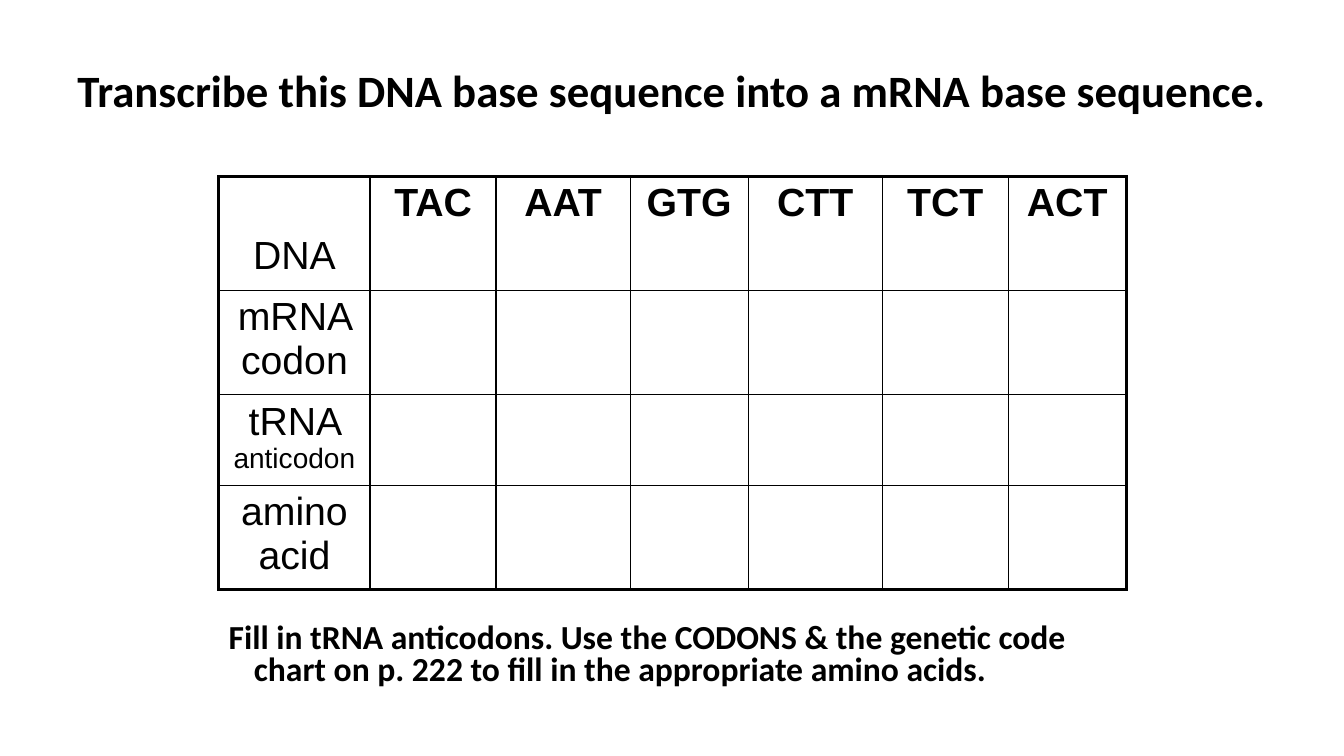
from lxml.etree import SubElement
from pptx import Presentation
from pptx.dml.color import RGBColor
from pptx.enum.text import MSO_ANCHOR, PP_ALIGN
from pptx.oxml.ns import qn
from pptx.util import Pt

EMU_PER_PX = 9144  # 100 px to the inch
BLACK = RGBColor(0x00, 0x00, 0x00)
THIN, THICK = 1, 2.25

COL_WIDTHS = [150, 125, 133, 117, 133, 125, 117]
ROW_HEIGHTS = [113, 103, 90, 103]
DNA_TRIPLETS = ["TAC", "AAT", "GTG", "CTT", "TCT", "ACT"]
# Each row label is a list of (text, size) runs
ROW_LABELS = [
    [("DNA", 28)],
    [("mRNA codon", 28)],
    [("tRNA ", 28), ("anticodon", 20)],
    [("amino acid", 28)],
]


def px(n):
    return n * EMU_PER_PX


def set_font(font, name, size, bold):
    font.name = name
    font.size = Pt(size)
    font.bold = bold
    font.color.rgb = BLACK


def add_text(slide, box, text, size, line_spacing, anchor=MSO_ANCHOR.TOP, hanging=0):
    tf = slide.shapes.add_textbox(*map(px, box)).text_frame
    tf.word_wrap = True
    tf.vertical_anchor = anchor
    p = tf.paragraphs[0]
    p.text = text
    p.line_spacing = line_spacing
    set_font(p.font, "Calibri", size, True)
    if hanging:
        pPr = p._p.get_or_add_pPr()
        pPr.set("marL", str(px(hanging)))
        pPr.set("indent", str(-px(hanging)))


def set_borders(cell, **widths):
    tcPr = cell._tc.get_or_add_tcPr()
    for side in "LRTB":
        ln = SubElement(tcPr, qn(f"a:ln{side}"), w=str(Pt(widths[side])))
        fill = SubElement(ln, qn("a:solidFill"))
        SubElement(fill, qn("a:srgbClr"), val=str(BLACK))


def fill_cell(cell, runs, bold):
    p = cell.text_frame.paragraphs[0]
    p.alignment = PP_ALIGN.CENTER
    for text, size in runs:
        r = p.add_run()
        r.text = text
        set_font(r.font, "Arial", size, bold)


def add_codon_table(slide, left, top):
    n_rows, n_cols = len(ROW_HEIGHTS), len(COL_WIDTHS)
    box = (left, top, sum(COL_WIDTHS), sum(ROW_HEIGHTS))
    table = slide.shapes.add_table(n_rows, n_cols, *map(px, box)).table
    table.first_row = table.horz_banding = False
    for col, width in zip(table.columns, COL_WIDTHS):
        col.width = px(width)
    for row, height in zip(table.rows, ROW_HEIGHTS):
        row.height = px(height)

    # Thick outer frame, thin inner grid
    for i in range(n_rows):
        for j in range(n_cols):
            cell = table.cell(i, j)
            set_borders(
                cell,
                L=THICK if j == 0 else THIN,
                R=THICK if j == n_cols - 1 else THIN,
                T=THICK if i == 0 else THIN,
                B=THICK if i == n_rows - 1 else THIN,
            )
            cell.fill.background()

    # Row labels and DNA triplets
    for i, runs in enumerate(ROW_LABELS):
        fill_cell(table.cell(i, 0), runs, False)
    for j, triplet in enumerate(DNA_TRIPLETS, start=1):
        fill_cell(table.cell(0, j), [(triplet, 28)], True)
    table.cell(0, 0).margin_top = px(57)  # DNA sits below the triplets


def main():
    prs = Presentation()
    prs.slide_width, prs.slide_height = px(1333), px(750)
    s = prs.slides.add_slide(prs.slide_layouts[6])

    # Title
    add_text(s, (67, 30, 1200, 125),
             "Transcribe this DNA base sequence into a mRNA base sequence.",
             32, 0.9, anchor=MSO_ANCHOR.MIDDLE)

    # Codon table
    add_codon_table(s, 217, 175)

    # Instructions
    add_text(s, (217, 614, 900, 92),
             "Fill in tRNA anticodons. Use the CODONS & the genetic code chart "
             "on p. 222 to fill in the appropriate amino acids.",
             24, 0.8, hanging=25)

    prs.save("out.pptx")


if __name__ == "__main__":
    main()
